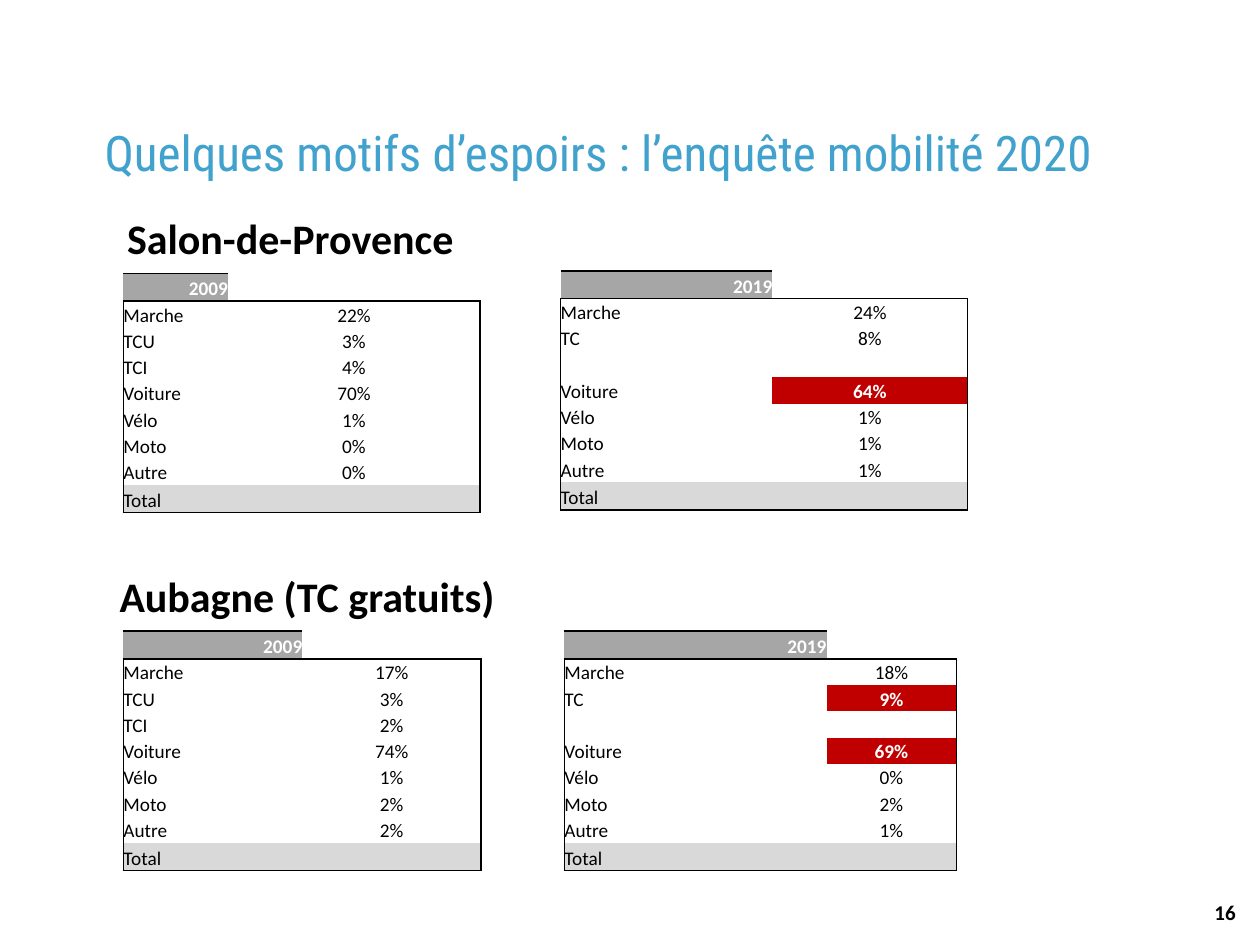
from pptx import Presentation
from pptx.dml.color import RGBColor
from pptx.enum.text import MSO_ANCHOR, PP_ALIGN
from pptx.oxml.ns import qn
from pptx.util import Inches, Pt
from lxml.etree import SubElement

BLACK, WHITE, GREY, PALE, RED = "000000", "FFFFFF", "A6A6A6", "D9D9D9", "C00000"
TITLE = "Quelques motifs d’espoirs : l’enquête mobilité 2020"
OLD = ["Marche", "TCU", "TCI", "Voiture", "Vélo", "Moto", "Autre", "Total"]
NEW = ["Marche", "TC", "", "Voiture", "Vélo", "Moto", "Autre", "Total"]
HEADS = [("Salon-de-Provence", 0.91, 1.62), ("Aubagne (TC gratuits)", 0.85, 4.46)]
TABLES = [
    dict(year="2019", left=4.45, top=2.15, cols=(1.68, 1.55), modes=NEW,
         shares=["24%", "8%", "", "64%", "1%", "1%", "1%", ""], marks=["Voiture"]),
    dict(year="2009", left=0.98, top=2.17, cols=(0.83, 2), modes=OLD,
         shares=["22%", "3%", "4%", "70%", "1%", "0%", "0%", ""], marks=[]),
    dict(year="2009", left=0.98, top=5.01, cols=(1.42, 1.42), modes=OLD,
         shares=["17%", "3%", "2%", "74%", "1%", "2%", "2%", ""], marks=[]),
    dict(year="2019", left=4.48, top=5.01, cols=(2.08, 1.03), modes=NEW,
         shares=["18%", "9%", "", "69%", "0%", "2%", "1%", ""], marks=["TC", "Voiture"]),
]
HIGH, EDGE = 1.9, 0.22


def hue(code):
    return RGBColor.from_string(code)


def write(frame, text, size=11, font="Calibri", color=BLACK, bold=False,
          align=PP_ALIGN.LEFT, line=None, after=None):
    para = frame.paragraphs[0]
    para.alignment = align
    if line:
        para.line_spacing, para.space_after = Pt(line), Pt(after)
    if not text:
        SubElement(para._p, qn("a:endParaRPr"), sz=str(size * 100))
        return
    run = para.add_run()
    run.text = text
    run.font.size, run.font.name, run.font.bold = Pt(size), font, bold
    run.font.color.rgb = hue(color)


def label(slide, text, left, top, width, height, **style):
    frame = slide.shapes.add_textbox(*map(Inches, (left, top, width, height))).text_frame
    frame.word_wrap = True
    write(frame, text, **style)


def border(cell, sides):
    props = cell._tc.get_or_add_tcPr()
    for side in "LRTB":
        line = SubElement(props, qn(f"a:ln{side}"), w=str(Pt(1)))
        if side in sides:
            SubElement(SubElement(line, qn("a:solidFill")), qn("a:srgbClr"), val=BLACK)
        else:
            SubElement(line, qn("a:noFill"))


def sides(row, col, last):
    edge = "LR"[col] if row else ""
    if row == 0:
        edge += "B" if col else "TB"
    elif row == 1:
        edge += "T"
    elif row == last:
        edge += "B"
    return edge


def grid(slide, year, left, top, cols, modes, shares, marks):
    rows = [(year, "")] + list(zip(modes, shares))
    last = len(rows) - 1
    table = slide.shapes.add_table(
        len(rows), 2, *map(Inches, (left, top, sum(cols), HIGH))).table
    table.first_row = table.horz_banding = False
    for col, width in enumerate(cols):
        table.columns[col].width = Inches(width)
    for row, pair in enumerate(rows):
        ends = row in (0, last)
        table.rows[row].height = Inches(EDGE if ends else (HIGH - 2 * EDGE) / (last - 1))
        for col, text in enumerate(pair):
            cell = table.cell(row, col)
            cell.margin_left = cell.margin_right = cell.margin_top = cell.margin_bottom = 0
            cell.vertical_anchor = MSO_ANCHOR.BOTTOM
            head = row == 0 and col == 0
            mark = col == 1 and pair[0] in marks
            align = PP_ALIGN.RIGHT if head else (PP_ALIGN.LEFT, PP_ALIGN.CENTER)[col]
            write(cell.text_frame, text, align=align, bold=head or mark,
                  color=WHITE if head or mark else BLACK)
            border(cell, sides(row, col, last))
            fill = GREY if head else RED if mark else PALE if row == last else None
            if fill:
                cell.fill.solid()
                cell.fill.fore_color.rgb = hue(fill)
            else:
                cell.fill.background()


def main():
    """Build the mobility survey slide."""
    deck = Presentation()
    deck.slide_width, deck.slide_height = Inches(10), Inches(7.5)
    slide = deck.slides.add_slide(deck.slide_layouts[5])
    title = slide.shapes.title
    title.left, title.top, title.width, title.height = map(Inches, (0.83, 0.92, 8.35, 0.57))
    frame = title.text_frame
    frame.margin_left, frame.vertical_anchor = 0, MSO_ANCHOR.MIDDLE
    write(frame, TITLE, size=28, font="Roboto Condensed", color="40A2CD")
    for text, left, top in HEADS:
        label(slide, text, left, top, 5.51, 0.5, size=24, bold=True, line=30, after=8)
    for table in TABLES:
        grid(slide, **table)
    label(slide, "16", 9.54, 7.09, 0.46, 0.4, size=12, bold=True)
    deck.save("out.pptx")


if __name__ == "__main__":
    main()
